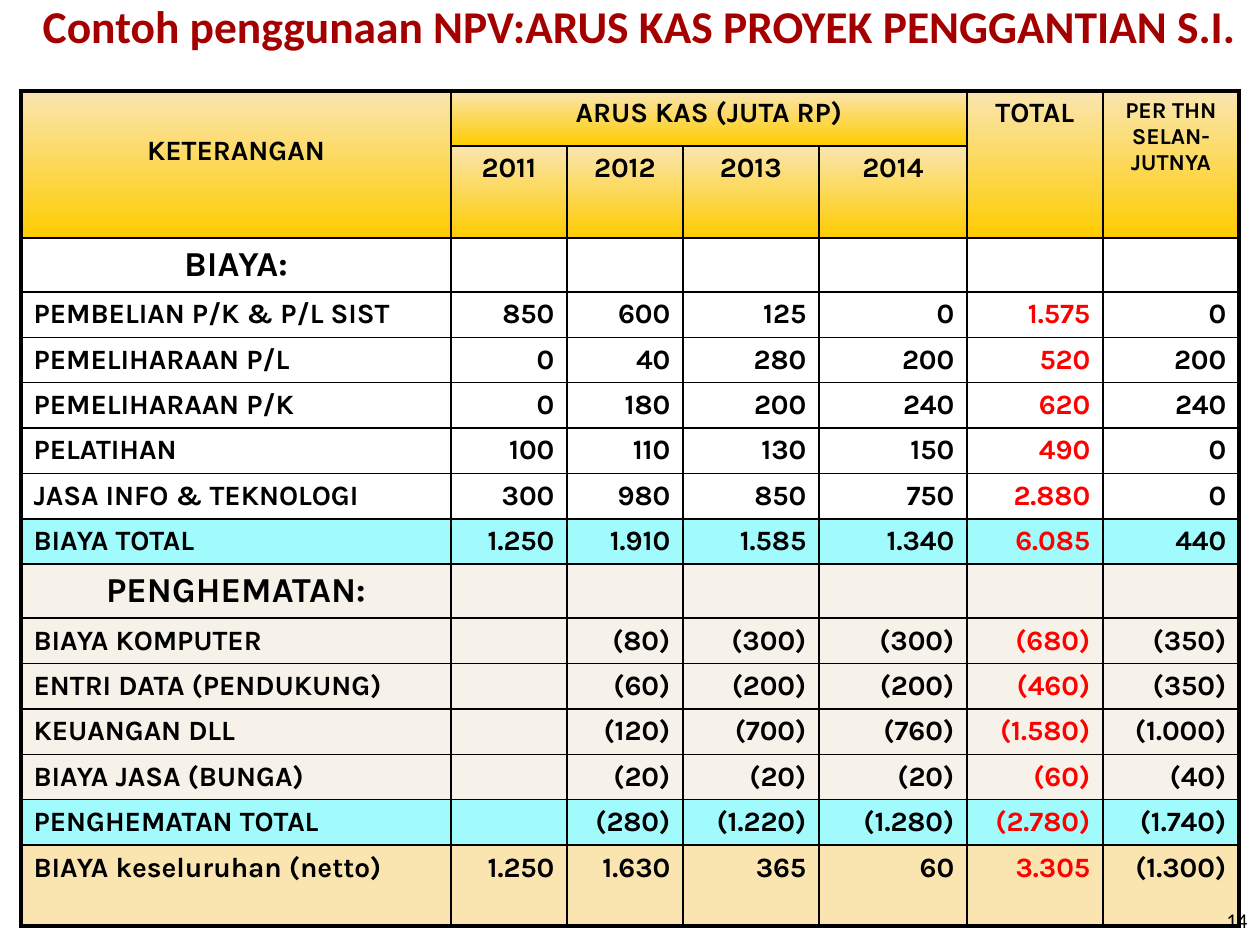
from dataclasses import dataclass

from lxml.etree import SubElement
from pptx import Presentation
from pptx.dml.color import RGBColor
from pptx.enum.text import MSO_ANCHOR, MSO_AUTO_SIZE, PP_ALIGN
from pptx.oxml.ns import qn
from pptx.util import Pt

SCALE = 914400 / 126
LEFT, MID, RIGHT = PP_ALIGN.LEFT, PP_ALIGN.CENTER, PP_ALIGN.RIGHT


@dataclass(frozen=True)
class Theme:
    head: str = "Calibri"
    body: str = "Karla"
    title: str = "A40000"
    ink: str = "000000"
    red: str = "FF0000"
    white: str = "FFFFFF"
    cyan: str = "A1FBFD"
    cream: str = "F6F2EA"
    sand: str = "FAE5B0"
    gold: str = "FFCC00"
    big: int = 26
    group: int = 20
    text: int = 16
    small: int = 13
    note: int = 12
    thin: float = 1
    thick: float = 2.25


WIDTHS = [430, 116, 116, 136, 148, 136, 136]
# Row, column, text, and the last row and column the cell spans
HEADS = [
    (0, 0, "KETERANGAN", 1, 0),
    (0, 1, "ARUS KAS (JUTA RP)", 0, 4),
    (0, 5, "TOTAL", 1, 5),
    (0, 6, "PER THN SELAN-JUTNYA", 1, 6),
] + [(1, col, str(2010 + col), 1, col) for col in range(1, 5)]

COSTS = [
    ("BIAYA:",),
    ("PEMBELIAN P/K & P/L SIST", "850", "600", "125", "0", "1.575", "0"),
    ("PEMELIHARAAN P/L", "0", "40", "280", "200", "520", "200"),
    ("PEMELIHARAAN P/K", "0", "180", "200", "240", "620", "240"),
    ("PELATIHAN", "100", "110", "130", "150", "490", "0"),
    ("JASA INFO & TEKNOLOGI", "300", "980", "850", "750", "2.880", "0"),
]
COST_SUM = ("BIAYA TOTAL", "1.250", "1.910", "1.585", "1.340", "6.085", "440")
SAVINGS = [
    ("PENGHEMATAN:",),
    ("BIAYA KOMPUTER", "", "(80)", "(300)", "(300)", "(680)", "(350)"),
    ("ENTRI DATA (PENDUKUNG)", "", "(60)", "(200)", "(200)", "(460)", "(350)"),
    ("KEUANGAN DLL", "", "(120)", "(700)", "(760)", "(1.580)", "(1.000)"),
    ("BIAYA JASA (BUNGA)", "", "(20)", "(20)", "(20)", "(60)", "(40)"),
]
SAVE_SUM = ("PENGHEMATAN TOTAL", "", "(280)", "(1.220)", "(1.280)",
            "(2.780)", "(1.740)")
NET = ("BIAYA keseluruhan (netto)", "1.250", "1.630", "365", "60",
       "3.305", "(1.300)")


def px(num):
    return round(num * SCALE)


class Deck:
    def __init__(self, theme):
        self.theme = theme
        self.file = Presentation()
        self.file.slide_width, self.file.slide_height = px(1260), px(945)
        self.slide = self.file.slides.add_slide(self.file.slide_layouts[5])

    def put(self, frame, text, size, face, color, align, bold=True):
        """Set the text of a frame and its style."""
        frame.word_wrap = True
        para = frame.paragraphs[0]
        para.alignment = align
        font = para.font
        font.size, font.name, font.bold = Pt(size), face, bold
        font.color.rgb = RGBColor.from_string(color)
        if text:
            para.add_run().text = text
        else:
            SubElement(para._p, qn("a:endParaRPr"), sz=str(size * 100))

    def title(self, text, box):
        shape = self.slide.shapes.title
        shape.left, shape.top, shape.width, shape.height = map(px, box)
        frame = shape.text_frame
        frame.auto_size = MSO_AUTO_SIZE.NONE
        frame.vertical_anchor = MSO_ANCHOR.MIDDLE
        style = self.theme
        self.put(frame, text, style.big, style.head, style.title, MID)

    def label(self, text, box):
        frame = self.slide.shapes.add_textbox(*map(px, box)).text_frame
        frame.vertical_anchor = MSO_ANCHOR.MIDDLE
        style = self.theme
        self.put(frame, text, style.note, style.head, style.ink, RIGHT, False)

    def table(self, left, top, widths, heights):
        grid = self.slide.shapes.add_table(
            len(heights), len(widths), px(left), px(top),
            px(sum(widths)), px(sum(heights))).table
        grid.first_row = grid.horz_banding = False
        for col, width in zip(grid.columns, widths):
            col.width = px(width)
        for row, height in zip(grid.rows, heights):
            row.height = px(height)
        self.frame(grid)
        return grid

    def frame(self, grid):
        """Draw thin inner rules and a thick outer edge."""
        style = self.theme
        last, end = len(grid.rows) - 1, len(grid.columns) - 1
        for row in range(last + 1):
            for col in range(end + 1):
                props = grid.cell(row, col)._tc.get_or_add_tcPr()
                edges = {"L": col == 0, "R": col == end,
                         "T": row == 0, "B": row == last}
                for side, outer in edges.items():
                    width = Pt(style.thick if outer else style.thin)
                    line = SubElement(props, qn(f"a:ln{side}"), w=str(width))
                    fill = SubElement(line, qn("a:solidFill"))
                    SubElement(fill, qn("a:srgbClr"), val=style.ink)

    def heads(self, grid, items):
        style = self.theme
        for row in range(2):
            for col in range(len(grid.columns)):
                fill = grid.cell(row, col).fill
                fill.gradient()
                fill.gradient_angle = 270
                for stop, color in zip(fill.gradient_stops,
                                       (style.sand, style.gold)):
                    stop.color.rgb = RGBColor.from_string(color)
        for row, col, text, low, far in items:
            cell = grid.cell(row, col)
            if (row, col) != (low, far):
                cell.merge(grid.cell(low, far))
            size = style.small if col == 6 else style.text
            self.put(cell.text_frame, text, size, style.body, style.ink, MID)
        grid.cell(0, 0).margin_top = px(44)

    def row(self, grid, num, texts, back):
        """Fill one body row; a lone text is a group heading."""
        style = self.theme
        group = len(texts) == 1
        for col in range(len(grid.columns)):
            cell = grid.cell(num, col)
            cell.fill.solid()
            cell.fill.fore_color.rgb = RGBColor.from_string(back)
            text = texts[col] if col < len(texts) else ""
            size = style.group if group and col == 0 else style.text
            align = RIGHT if col else MID if group else LEFT
            color = style.red if col == 5 else style.ink
            self.put(cell.text_frame, text, size, style.body, color, align)


def main():
    theme = Theme()
    deck = Deck(theme)
    deck.title("Contoh penggunaan NPV:ARUS KAS PROYEK PENGGANTIAN S.I.",
               (10, -10, 1260, 71))
    rows = [(texts, theme.white) for texts in COSTS]
    rows.append((COST_SUM, theme.cyan))
    rows += [(texts, theme.cream) for texts in SAVINGS]
    rows += [(SAVE_SUM, theme.cyan), (NET, theme.sand)]
    body = [54 if len(texts) == 1 else 45 for texts, _ in rows]
    body[-1] = 81
    grid = deck.table(21, 91, WIDTHS, [55, 92] + body)
    deck.heads(grid, HEADS)
    for num, (texts, back) in enumerate(rows, 2):
        deck.row(grid, num, texts, back)
    deck.label("14", (966, 895, 294, 50))
    deck.file.save("out.pptx")


if __name__ == "__main__":
    main()
